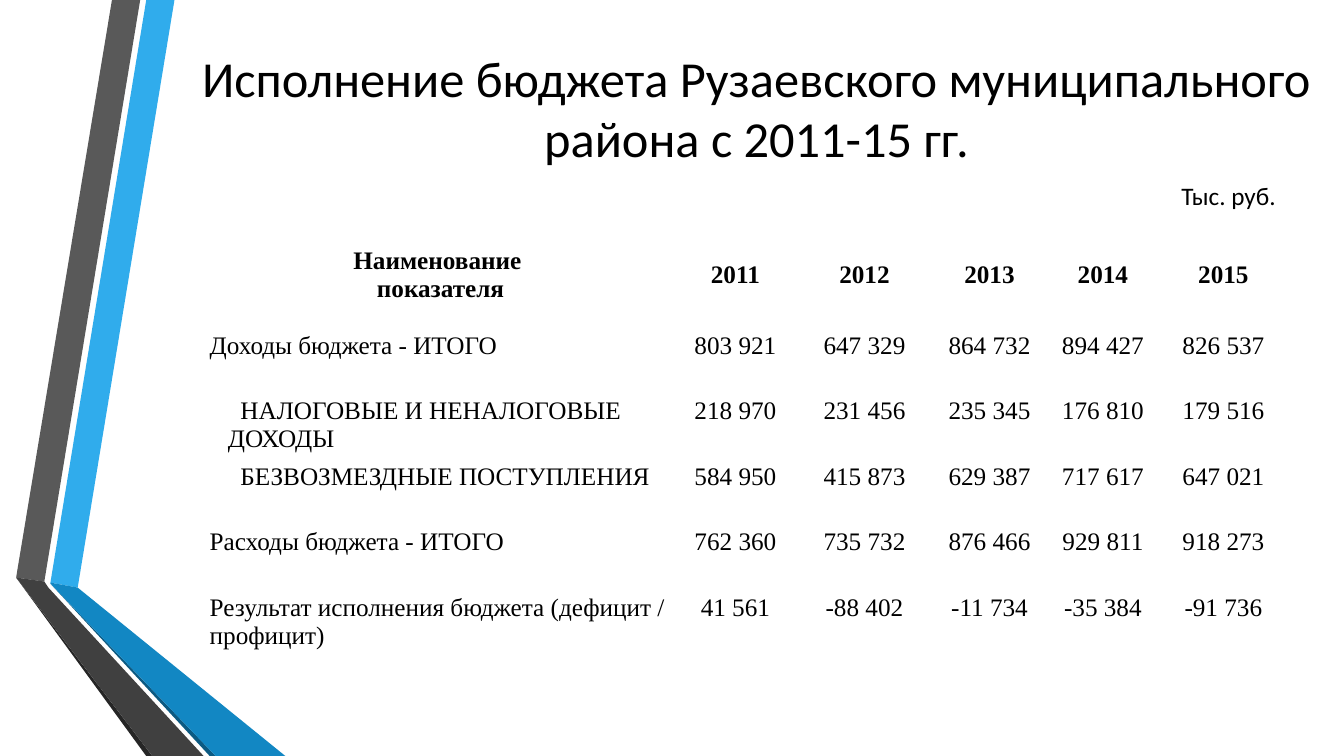
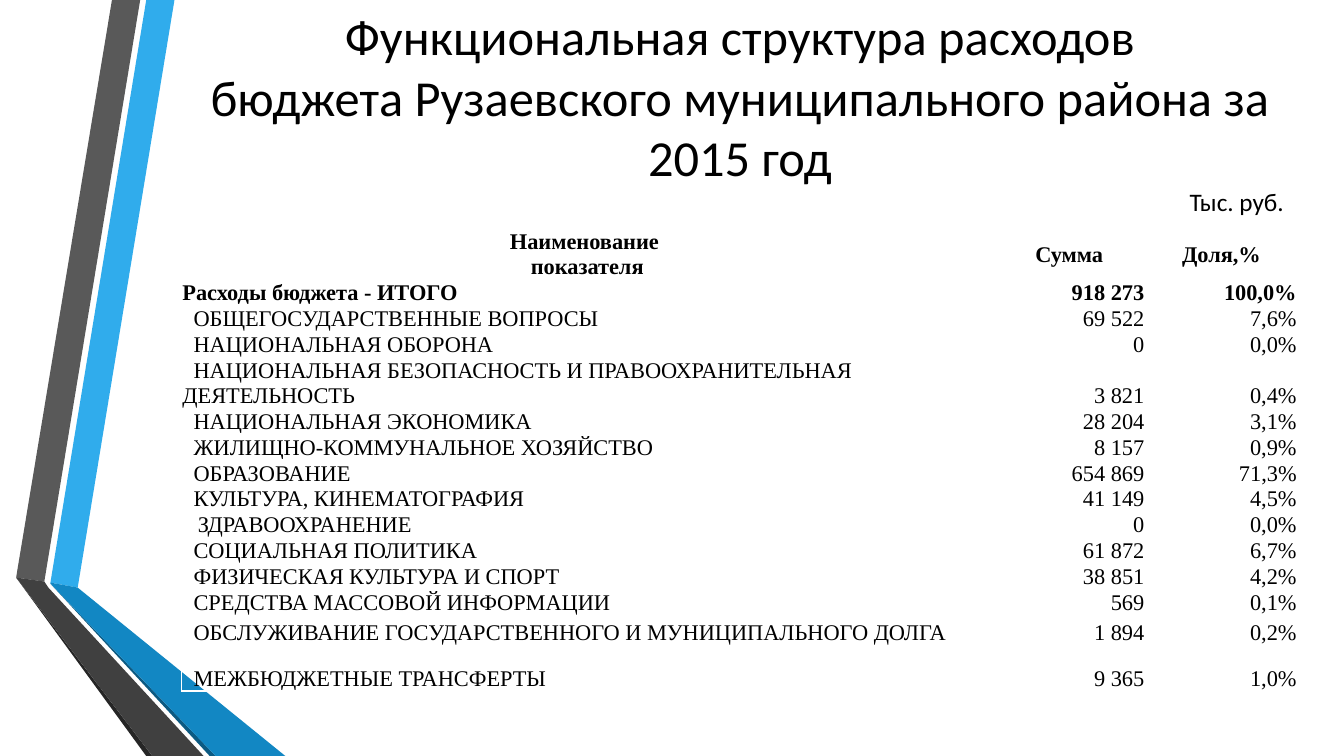
from pptx import Presentation
from pptx.dml.color import RGBColor as RGB
from pptx.enum.text import MSO_ANCHOR as ANCHOR, MSO_AUTO_SIZE as FIT, PP_ALIGN as ALIGN
from pptx.oxml import parse_xml
from pptx.oxml.ns import nsdecls
from pptx.util import Inches, Pt

WIDE, HIGH = Inches(13.33), Inches(7.5)
HEX = {
    "text": "000000", "edge": "FFFFFF",
    "sky": "30ACEC", "blue": "1287C3", "navy": "0C5A82",
    "gray": "595959", "dark": "404040", "black": "262626",
}
SANS, SERIF = "Calibri", "Times New Roman"
UNIT = "Тыс. руб."

# Ribbon outlines: colour and corners, in percent of the slide
RIBBON = [
    ("sky", [(3.75, 77.07), (5.78, 77.73), (12.98, 0), (10.88, 0)]),
    ("gray", [(10.43, 0), (8.33, 0), (1.2, 76.4), (3.3, 76.93)]),
    ("black", [(1.2, 76.4), (10.88, 100), (11.33, 100)]),
    ("navy", [(3.75, 77.2), (15.6, 100), (16.05, 100)]),
    ("blue", [(3.75, 77.2), (16.05, 100), (21.23, 100), (5.78, 77.73), (3.75, 77.07)]),
    ("dark", [(15.15, 100), (3.6, 77.73), (3.3, 76.93), (1.2, 76.4), (11.33, 100)]),
]

# Table rows: first-line indent in points, then the cells
TOTALS = [
    (0, "Наименование \nпоказателя", "2011", "2012", "2013", "2014", "2015"),
    (0, "Доходы бюджета - ИТОГО", "803 921", "647 329", "864 732", "894 427", "826 537"),
    (9, "НАЛОГОВЫЕ И НЕНАЛОГОВЫЕ ДОХОДЫ",
     "218 970", "231 456", "235 345", "176 810", "179 516"),
    (9, "БЕЗВОЗМЕЗДНЫЕ ПОСТУПЛЕНИЯ",
     "584 950", "415 873", "629 387", "717 617", "647 021"),
    (0, "Расходы бюджета - ИТОГО", "762 360", "735 732", "876 466", "929 811", "918 273"),
    (0, "Результат исполнения бюджета (дефицит / профицит)",
     "41 561", "-88 402", "-11 734", "-35 384", "-91 736"),
]
COSTS = [
    (0, "Наименование \nпоказателя", "Сумма", "Доля,%"),
    (0, "Расходы бюджета - ИТОГО", "918 273", "100,0%"),
    (8, "ОБЩЕГОСУДАРСТВЕННЫЕ ВОПРОСЫ", "69 522", "7,6%"),
    (8, "НАЦИОНАЛЬНАЯ ОБОРОНА", "0", "0,0%"),
    (8, "НАЦИОНАЛЬНАЯ БЕЗОПАСНОСТЬ И ПРАВООХРАНИТЕЛЬНАЯ ДЕЯТЕЛЬНОСТЬ", "3 821", "0,4%"),
    (8, "НАЦИОНАЛЬНАЯ ЭКОНОМИКА", "28 204", "3,1%"),
    (8, "ЖИЛИЩНО-КОММУНАЛЬНОЕ ХОЗЯЙСТВО", "8 157", "0,9%"),
    (8, "ОБРАЗОВАНИЕ", "654 869", "71,3%"),
    (8, "КУЛЬТУРА, КИНЕМАТОГРАФИЯ", "41 149", "4,5%"),
    (11, "ЗДРАВООХРАНЕНИЕ", "0", "0,0%"),
    (8, "СОЦИАЛЬНАЯ ПОЛИТИКА", "61 872", "6,7%"),
    (8, "ФИЗИЧЕСКАЯ КУЛЬТУРА И СПОРТ", "38 851", "4,2%"),
    (8, "СРЕДСТВА МАССОВОЙ ИНФОРМАЦИИ", "569", "0,1%"),
    (8, "ОБСЛУЖИВАНИЕ ГОСУДАРСТВЕННОГО И МУНИЦИПАЛЬНОГО ДОЛГА", "1 894", "0,2%"),
    (8, "МЕЖБЮДЖЕТНЫЕ ТРАНСФЕРТЫ", "9 365", "1,0%"),
]


def across(share):
    return round(WIDE * share / 100)


def down(share):
    return round(HIGH * share / 100)


def box(x, y, w, h):
    return across(x), down(y), across(w), down(h)


def write(frame, text, size=18, font=SANS, bold=False, align=ALIGN.LEFT, indent=0):
    """Fill a text frame, one paragraph a line."""
    for i, line in enumerate(text.split("\n")):
        para = frame.add_paragraph() if i else frame.paragraphs[0]
        para.alignment = align
        if indent:
            para._p.get_or_add_pPr().set("indent", str(Pt(indent)))
        run = para.add_run()
        run.text = line
        run.font.size, run.font.name, run.font.bold = Pt(size), font, bold
        run.font.color.rgb = RGB.from_string(HEX["text"])


def ribbon(slide, layout):
    """Draw the folded bands and move them to the layout, behind its text."""
    tree = layout.shapes.element
    for i, (hue, spots) in enumerate(RIBBON):
        first, *rest = [(across(x), down(y)) for x, y in spots]
        pen = slide.shapes.build_freeform(*first)
        pen.add_line_segments(rest, close=True)
        band = pen.convert_to_shape()
        band.shadow.inherit = False
        band.fill.solid()
        band.fill.fore_color.rgb = RGB.from_string(HEX[hue])
        band.line.fill.background()
        tree.insert(2 + i, band.element)


def title(slide, text, place):
    head = slide.shapes.title
    head.left, head.top, head.width, head.height = box(*place)
    frame = head.text_frame
    frame.word_wrap, frame.auto_size = True, FIT.NONE
    frame.vertical_anchor = ANCHOR.MIDDLE
    write(frame, text, size=36, align=ALIGN.CENTER)


def unit(slide, x, y):
    frame = slide.shapes.add_textbox(*box(x, y, 8.78, 5.33)).text_frame
    frame.word_wrap, frame.auto_size = False, FIT.SHAPE_TO_FIT_TEXT
    write(frame, UNIT)


def border(cell):
    props = cell._tc.get_or_add_tcPr()
    for i, side in enumerate("LRTB"):
        props.insert(i, parse_xml(
            f'<a:ln{side} {nsdecls("a")} w="{Pt(1)}"><a:solidFill>'
            f'<a:srgbClr val="{HEX["edge"]}"/></a:solidFill></a:ln{side}>'))


def table(slide, rows, x, y, cols, highs, size, align, anchor, bold=1, inset=0.01):
    """Add a clear table; the first `bold` rows are bold, inset pads indented labels."""
    place = box(x, y, sum(cols), sum(highs))
    grid = slide.shapes.add_table(len(rows), len(cols), *place).table
    grid.first_row = grid.horz_banding = False
    for col, wide in zip(grid.columns, cols):
        col.width = across(wide)
    for r, (indent, *texts) in enumerate(rows):
        grid.rows[r].height = down(highs[r])
        for c, text in enumerate(texts):
            cell = grid.cell(r, c)
            label = c == 0 and r > 0
            shift = indent if label else 0
            cell.margin_left = Inches(inset if shift else 0.01)
            cell.margin_right = cell.margin_top = Inches(0.01)
            cell.margin_bottom = 0
            cell.vertical_anchor = anchor if r else ANCHOR.MIDDLE
            cell.fill.background()
            border(cell)
            side = ALIGN.LEFT if label else align if r else ALIGN.CENTER
            write(cell.text_frame, text, size=size, font=SERIF, bold=r < bold,
                  align=side, indent=shift)


def main():
    prs = Presentation()
    prs.slide_width, prs.slide_height = WIDE, HIGH
    layout = prs.slide_layouts[5]

    # Budget by year
    slide = prs.slides.add_slide(layout)
    ribbon(slide, layout)
    title(slide, "Исполнение бюджета Рузаевского муниципального района с 2011-15 гг.",
          (13.5, 5.33, 85.6, 17.73))
    table(slide, TOTALS, 15.53, 28.93, [34.5, 9.38, 9.83, 8.78, 8.1, 9.83],
          [14.8] + [8.67] * 5, 18, ALIGN.CENTER, ANCHOR.TOP, inset=0.19)
    unit(slide, 87.17, 23.2)

    # Spending by function
    slide = prs.slides.add_slide(layout)
    title(slide, "Функциональная структура расходов\n"
          "бюджета Рузаевского муниципального района за 2015 год",
          (12.23, 1.2, 85.67, 23.07))
    thin = 2.27
    table(slide, COSTS, 13.5, 30.27, [60.39, 11.33, 11.33],
          [6.13] + [thin] * 3 + [4] + [thin] * 8 + [4, 6],
          16, ALIGN.RIGHT, ANCHOR.BOTTOM, bold=2)
    unit(slide, 87.77, 24)

    prs.save("out.pptx")


if __name__ == "__main__":
    main()
